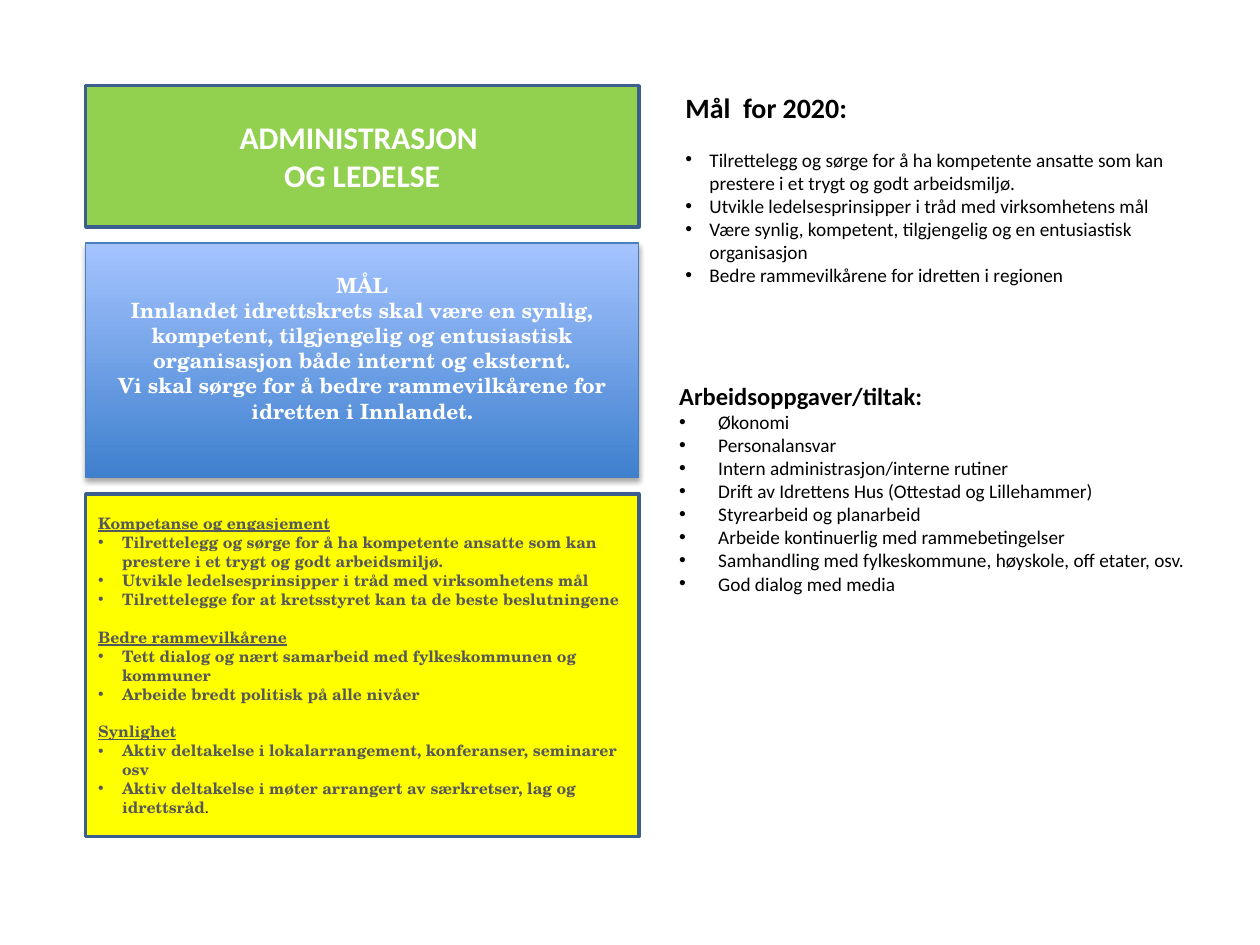
from lxml.etree import SubElement
from pptx import Presentation
from pptx.dml.color import RGBColor
from pptx.enum.shapes import MSO_SHAPE
from pptx.enum.text import MSO_ANCHOR, MSO_AUTO_SIZE, PP_ALIGN
from pptx.oxml import parse_xml
from pptx.oxml.ns import nsdecls, qn
from pptx.util import Inches, Pt

LEFT, TOP, WIDTH, GAP = 0.68, 0.68, 4.39, 0.13
TITLE_HEIGHT, VISION_HEIGHT, FOCUS_HEIGHT = 1.12, 1.86, 2.72
SANS, SERIF = "Calibri", "TeX Gyre Schola"

VISION = [
    "MÅL\vInnlandet idrettskrets skal være en synlig, kompetent, tilgjengelig "
    "og entusiastisk organisasjon både internt og eksternt.",
    "Vi skal sørge for å bedre rammevilkårene for idretten i Innlandet.",
]
STAFF = ("Tilrettelegg og sørge for å ha kompetente ansatte som kan prestere "
         "i et trygt og godt arbeidsmiljø.")
PRINCIPLES = "Utvikle ledelsesprinsipper i tråd med virksomhetens mål"
FOCUS_AREAS = {
    "Kompetanse og engasjement": [
        STAFF, PRINCIPLES,
        "Tilrettelegge for at kretsstyret kan ta de beste beslutningene"],
    "Bedre rammevilkårene": [
        "Tett dialog og nært samarbeid med fylkeskommunen og kommuner",
        "Arbeide bredt politisk på alle nivåer"],
    "Synlighet": [
        "Aktiv deltakelse i lokalarrangement, konferanser, seminarer osv",
        "Aktiv deltakelse i møter arrangert av særkretser, lag og idrettsråd"],
}
GOALS = [
    STAFF, PRINCIPLES,
    "Være synlig, kompetent, tilgjengelig og en entusiastisk organisasjon",
    "Bedre rammevilkårene for idretten i regionen",
]
TASKS = [
    "Økonomi",
    "Personalansvar",
    "Intern administrasjon/interne rutiner",
    "Drift av Idrettens Hus (Ottestad og Lillehammer)",
    "Styrearbeid og planarbeid",
    "Arbeide kontinuerlig med rammebetingelser",
    "Samhandling med fylkeskommune, høyskole, off etater, osv.",
    "God dialog med media",
]


def color(value):
    return RGBColor.from_string(value)


def place(shape, left, top, width, height):
    shape.left, shape.top = Inches(left), Inches(top)
    shape.width, shape.height = Inches(width), Inches(height)


def style_box(shape, fill, line, line_width):
    """Fill with one colour, or with a (bottom, top) pair as a gradient."""
    if isinstance(fill, tuple):
        shape.fill.gradient()
        shape.fill.gradient_angle = 90
        for stop, value in zip(shape.fill.gradient_stops, fill):
            stop.color.rgb = color(value)
    else:
        shape.fill.solid()
        shape.fill.fore_color.rgb = color(fill)
    shape.line.color.rgb = color(line)
    shape.line.width = Pt(line_width)
    shape.shadow.inherit = False


def add_box(page, top, height, fill, line, line_width):
    box = page.shapes.add_shape(MSO_SHAPE.RECTANGLE, Inches(LEFT), Inches(top),
                                Inches(WIDTH), Inches(height))
    style_box(box, fill, line, line_width)
    box.text_frame.word_wrap = True
    box.text_frame.vertical_anchor = MSO_ANCHOR.MIDDLE
    return box


def add_soft_shadow(shape):
    effects = shape.element.spPr.find(qn("a:effectLst"))
    effects.append(parse_xml(
        f'<a:outerShdw {nsdecls("a")} blurRad="{Pt(3.1)}" dist="{Pt(1.8)}" '
        'dir="5400000" rotWithShape="0"><a:srgbClr val="000000">'
        '<a:alpha val="35000"/></a:srgbClr></a:outerShdw>'))


def format_run(span, font, size, ink, bold=True, underline=False):
    span.font.name, span.font.size = font, Pt(size)
    span.font.color.rgb = color(ink)
    span.font.bold, span.font.underline = bold, underline


def format_para(para, font, size, ink, bold=True, underline=False,
                align=PP_ALIGN.LEFT, before=0, indent=0):
    """An indent above zero gives the paragraph a hanging bullet."""
    para.alignment = align
    para.space_before, para.space_after = Pt(before), Pt(0)
    properties = para._p.get_or_add_pPr()
    properties.set("marL", str(Inches(indent)))
    properties.set("indent", str(-Inches(indent)))
    if indent:
        SubElement(properties, qn("a:buFont"), typeface="Arial")
        SubElement(properties, qn("a:buChar"), char="•")
    else:
        SubElement(properties, qn("a:buNone"))
    for span in para.runs:
        format_run(span, font, size, ink, bold, underline)


def fill_centered(frame, lines, font, size):
    frame.text = "\n".join(lines)
    for para in frame.paragraphs:
        format_para(para, font, size, "FFFFFF", align=PP_ALIGN.CENTER)


def fill_focus(frame):
    frame.text = "\n".join(line for heading, items in FOCUS_AREAS.items()
                           for line in [heading, *items])
    for number, para in enumerate(frame.paragraphs):
        heading = para.text in FOCUS_AREAS
        format_para(para, SERIF, 9, "57585B", underline=heading,
                    before=10.8 if heading and number else 0,
                    indent=0 if heading else 0.19)
    stop = frame.paragraphs[-1].add_run()
    stop.text = "."
    format_run(stop, SANS, 9, "000000", bold=False)


def fill_list(body, heading, size, items, indent, gap=0):
    frame = body.text_frame
    frame.auto_size = MSO_AUTO_SIZE.NONE
    frame.vertical_anchor = MSO_ANCHOR.TOP
    frame.text = "\n".join([heading, *items])
    first, *rest = frame.paragraphs
    format_para(first, SANS, size, "000000")
    for number, para in enumerate(rest):
        format_para(para, SANS, 11, "000000", bold=False, indent=indent,
                    before=0 if number else gap)


def main():
    deck = Presentation()
    deck.slide_width, deck.slide_height = Inches(10), Inches(7.5)
    page = deck.slides.add_slide(deck.slide_layouts[3])
    title, goals, tasks = page.placeholders

    place(title, LEFT, TOP, WIDTH, TITLE_HEIGHT)
    style_box(title, "92D050", "3A5F8C", 2)
    title.text_frame.auto_size = MSO_AUTO_SIZE.NONE
    fill_centered(title.text_frame, ["ADMINISTRASJON ", "OG LEDELSE"], SANS, 18)

    vision_top = TOP + TITLE_HEIGHT + GAP
    vision = add_box(page, vision_top, VISION_HEIGHT,
                     ("3F80CE", "A4C4FF"), "4B7EBC", 0.75)
    add_soft_shadow(vision)
    vision.text_frame.margin_bottom = Inches(0.25)
    fill_centered(vision.text_frame, VISION, SERIF, 12)

    focus_top = vision_top + VISION_HEIGHT + GAP
    focus = add_box(page, focus_top, FOCUS_HEIGHT, "FFFF00", "3A5F8C", 2)
    fill_focus(focus.text_frame)

    place(goals, 5.34, 0.67, 4.31, 1.85)
    fill_list(goals, "Mål  for 2020:", 16, GOALS, indent=0.19, gap=13.4)
    place(tasks, 5.29, 2.97, 4.31, 2.42)
    fill_list(tasks, "Arbeidsoppgaver/tiltak:", 14, TASKS, indent=0.31)

    deck.save("out.pptx")


if __name__ == "__main__":
    main()
